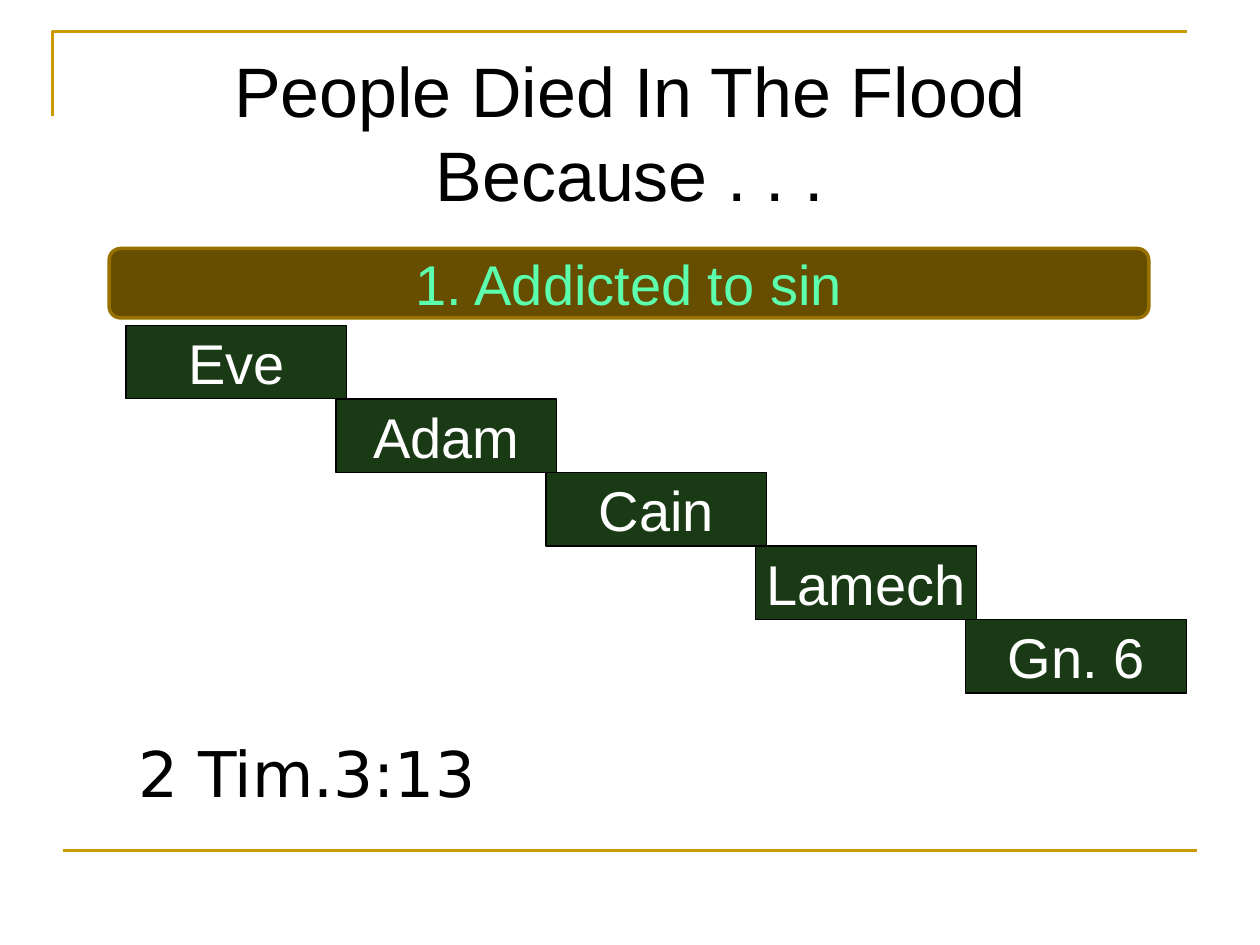
import pptx
import pptx.util
import pptx.dml.color
import pptx.enum.shapes
import pptx.enum.text
import pptx.oxml.ns
import lxml.etree

Cm = pptx.util.Cm
Pt = pptx.util.Pt
RGBColor = pptx.dml.color.RGBColor
Shape = pptx.enum.shapes.MSO_SHAPE
Align = pptx.enum.text.PP_ALIGN
Anchor = pptx.enum.text.MSO_ANCHOR

BLACK = RGBColor(0x00, 0x00, 0x00)
WHITE = RGBColor(0xFF, 0xFF, 0xFF)
GOLD = RGBColor(0xCC, 0x99, 0x00)
BROWN = RGBColor(0x66, 0x4D, 0x00)
BROWN_EDGE = RGBColor(0x97, 0x71, 0x00)
MINT = RGBColor(0x5C, 0xFF, 0xAD)
DARK_GREEN = RGBColor(0x1A, 0x3A, 0x15)

NAMES = ["Eve", "Adam", "Cain", "Lamech", "Gn. 6"]


def write_text(shape, text, size=32, color=BLACK, font="Arial", align=Align.CENTER,
               anchor=Anchor.MIDDLE, wrap=True, top_inset=Cm(0.13), spacing=None):
    frame = shape.text_frame
    frame.word_wrap = wrap
    frame.vertical_anchor = anchor
    frame.margin_top = top_inset
    para = frame.paragraphs[0]
    para.text = text
    para.alignment = align
    para.line_spacing = spacing
    for span in para.runs:
        span.font.size = Pt(size)
        span.font.name = font
        span.font.color.rgb = color


def add_block(page, preset, left, top, width, height, fill, edge, edge_width):
    block = page.shapes.add_shape(preset, left, top, width, height)
    block.shadow.inherit = False
    block.fill.solid()
    block.fill.fore_color.rgb = fill
    block.line.color.rgb = edge
    block.line.width = Pt(edge_width)
    return block


def add_frame_lines(page, left, top, width, height):
    """Draw the top-left corner and the bottom rule, which sits slightly to the right."""
    builder = page.shapes.build_freeform(left, top + Cm(1.7))
    builder.add_line_segments([(left, top), (left + width, top)], close=False)
    corner = builder.convert_to_shape()
    corner.shadow.inherit = False
    corner.fill.background()

    rule_left = left + Cm(0.2)
    bottom = top + height
    rule = page.shapes.add_connector(pptx.enum.shapes.MSO_CONNECTOR.STRAIGHT,
                                     rule_left, bottom, rule_left + width, bottom)
    properties = rule.element.find(pptx.oxml.ns.qn("p:spPr"))
    for shape in (corner, rule):
        shape.line.color.rgb = GOLD
        shape.line.width = Pt(1.5)
    lxml.etree.SubElement(properties, pptx.oxml.ns.qn("a:effectLst"))


def add_title(page, left, top, width, height):
    box = page.shapes.add_textbox(left, top, width, height)
    write_text(box, "People Died In The Flood\vBecause . . .", size=40,
               anchor=Anchor.TOP, top_inset=Cm(0.2), spacing=Pt(48))


def add_reason(page, left, top, width, height):
    banner = add_block(page, Shape.ROUNDED_RECTANGLE, left, top, width, height,
                       BROWN, BROWN_EDGE, 2)
    write_text(banner, "1. Addicted to sin", color=MINT)


def add_staircase(page, left, top, width, height):
    """Step the names down from the top-left to the bottom-right of the box."""
    step_width = Cm(4.45)
    step_height = height // len(NAMES)
    stride = (width - step_width) // (len(NAMES) - 1)
    for index, name in enumerate(NAMES):
        step = add_block(page, Shape.RECTANGLE, left + index * stride,
                         top + index * step_height, step_width, step_height,
                         DARK_GREEN, BLACK, 0.75)
        write_text(step, name, color=WHITE, wrap=False)


def add_verse(page, left, top, width, height):
    box = page.shapes.add_textbox(left, top, width, height)
    write_text(box, "2 Tim.3:13", size=36, font="DejaVu Sans",
               align=Align.LEFT, anchor=Anchor.TOP)


def main():
    deck = pptx.Presentation()
    deck.slide_width = Cm(25.4)
    deck.slide_height = Cm(19.05)
    page = deck.slides.add_slide(deck.slide_layouts[6])
    add_frame_lines(page, Cm(1.06), Cm(0.64), Cm(22.86), Cm(16.51))
    add_title(page, Cm(1.27), Cm(0.76), Cm(22.86), Cm(3.45))
    add_verse(page, Cm(2.54), Cm(14.68), Cm(21.59), Cm(1.75))
    add_staircase(page, Cm(2.54), Cm(6.56), Cm(21.38), Cm(7.41))
    add_reason(page, Cm(2.2), Cm(5.01), Cm(20.96), Cm(1.4))
    deck.save("out.pptx")


if __name__ == "__main__":
    main()
